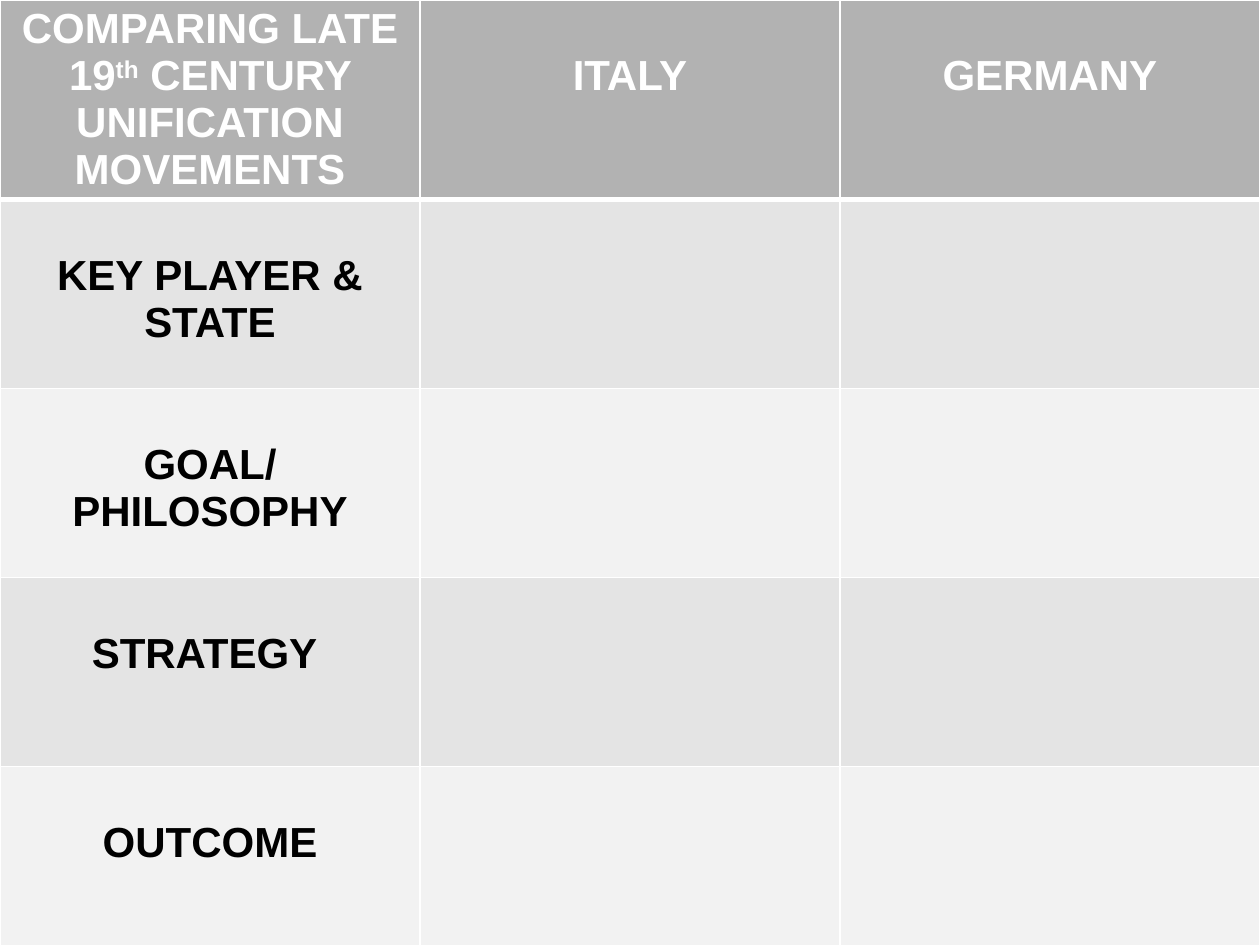
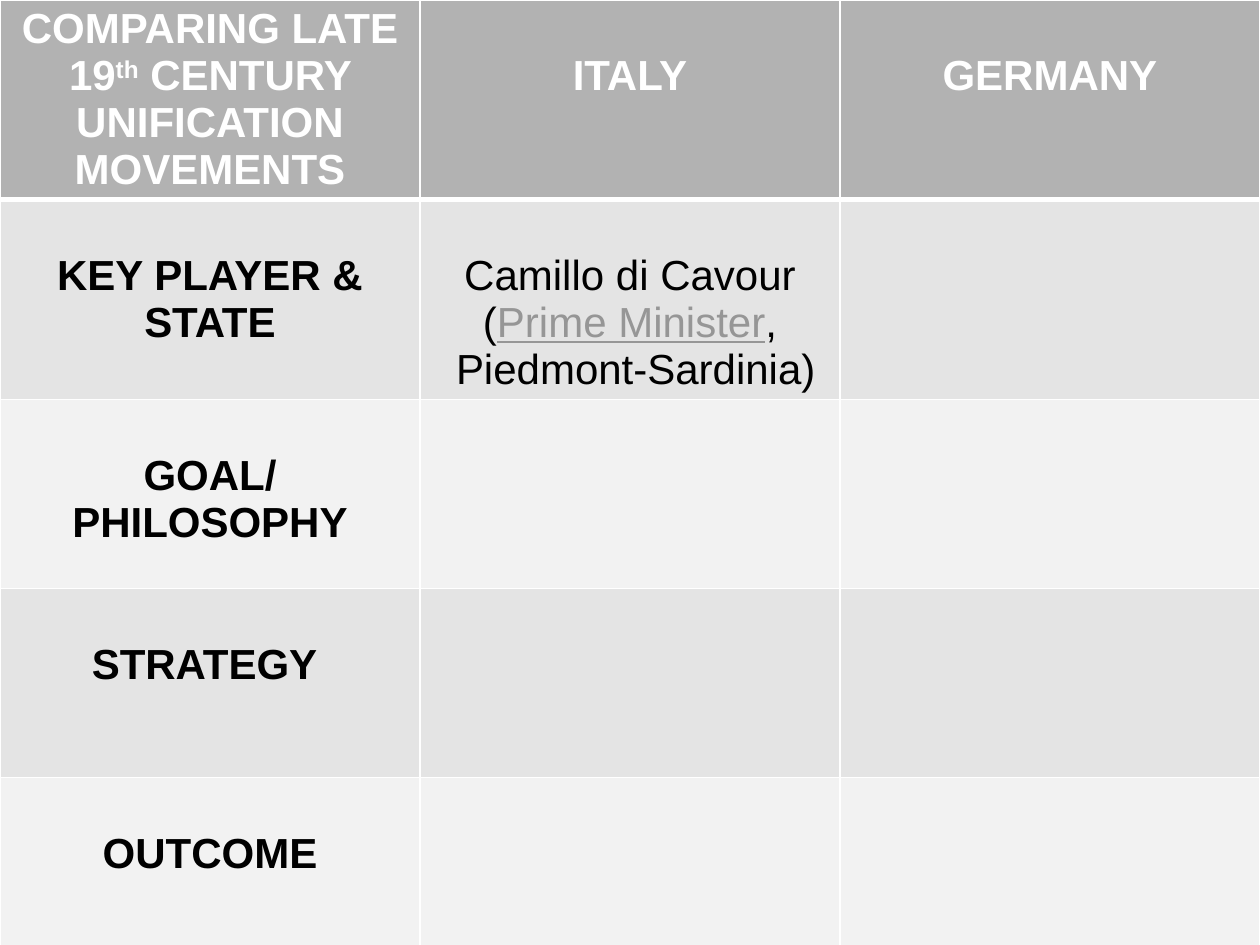
from pptx import Presentation
from pptx.dml.color import RGBColor
from pptx.enum.text import PP_ALIGN as Align
from pptx.oxml.ns import qn
from pptx.util import Emu, Pt
from lxml.etree import SubElement

EMU_PER_PX = 914400 // 126
SLIDE_WIDTH, SLIDE_HEIGHT = 1260, 945
BLANK_LAYOUT = 6

BLACK = RGBColor(0x00, 0x00, 0x00)
WHITE = RGBColor(0xFF, 0xFF, 0xFF)
HEADER_GREY = RGBColor(0xB2, 0xB2, 0xB2)
DARK_BAND = RGBColor(0xE4, 0xE4, 0xE4)
LIGHT_BAND = RGBColor(0xF2, 0xF2, 0xF2)
LINK_GREY = RGBColor(0x96, 0x96, 0x96)

FONT = "Arial"
FONT_SIZE = Pt(24)
CELL_MARGIN = 6
DROPPED_MARGIN = 53  # cell margin plus one line of text
THIN, THICK = 1, 3

# Each paragraph is a list of (text, style) runs
COMPARISON_TITLE = [[("COMPARING LATE 19", ""), ("th", "superscript"),
                     (" CENTURY UNIFICATION MOVEMENTS", "")]]
COUNTRIES = ["ITALY", "GERMANY"]
TOPICS = ["KEY PLAYER & STATE", "GOAL/PHILOSOPHY", "STRATEGY ", "OUTCOME"]
CAVOUR = [
    [("Camillo di Cavour", "")],
    [("(", ""), ("Prime Minister", "underlined"), (",", "")],
    [(" Piedmont-Sardinia)", "")],
]


def px(length):
    return Emu(round(length * 914400 / 126))


def add_run(paragraph, text, color, bold, style=""):
    run = paragraph.add_run()
    run.text = text
    font = run.font
    font.name, font.size, font.bold = FONT, FONT_SIZE, bold
    font.color.rgb = color
    if style == "superscript":
        run._r.get_or_add_rPr().set("baseline", "30000")
    elif style == "underlined":
        font.underline = True
        font.color.rgb = LINK_GREY


def write_cell(cell, paragraphs, color=BLACK, bold=False, dropped=True):
    """Write centred paragraphs, one line below the top when dropped."""
    cell.margin_top = px(DROPPED_MARGIN if dropped else CELL_MARGIN)
    frame = cell.text_frame
    for index, runs in enumerate(paragraphs):
        paragraph = frame.add_paragraph() if index else frame.paragraphs[0]
        paragraph.alignment = Align.CENTER
        for text, style in runs:
            add_run(paragraph, text, color, bold, style)


def set_borders(cell, top, bottom):
    properties = cell._tc.get_or_add_tcPr()
    sides = [("a:lnL", THIN), ("a:lnR", THIN), ("a:lnT", top), ("a:lnB", bottom)]
    for position, (tag, width) in enumerate(sides):
        line = SubElement(properties, qn(tag), w=str(Pt(width)))
        fill = SubElement(line, qn("a:solidFill"))
        SubElement(fill, qn("a:srgbClr"), val=str(WHITE))
        properties.insert(position, line)  # borders come before the fill


def style_cell(cell, row):
    cell.fill.solid()
    if row == 0:
        cell.fill.fore_color.rgb = HEADER_GREY
    else:
        cell.fill.fore_color.rgb = DARK_BAND if row % 2 else LIGHT_BAND
    set_borders(cell, top=THICK if row == 1 else THIN,
                bottom=THICK if row == 0 else THIN)


def add_comparison_slide(presentation, answers):
    """Add the comparison table; answers maps (row, column) to paragraphs."""
    slide = presentation.slides.add_slide(presentation.slide_layouts[BLANK_LAYOUT])
    row_count, column_count = len(TOPICS) + 1, len(COUNTRIES) + 1
    table = slide.shapes.add_table(row_count, column_count, 0, 0,
                                   px(SLIDE_WIDTH), px(SLIDE_HEIGHT)).table
    table.horz_banding = False
    for row in range(row_count):
        for column in range(column_count):
            style_cell(table.cell(row, column), row)

    # Header row
    write_cell(table.cell(0, 0), COMPARISON_TITLE, WHITE, bold=True, dropped=False)
    for column, country in enumerate(COUNTRIES, start=1):
        write_cell(table.cell(0, column), [[(country, "")]], WHITE, bold=True)

    # Topic column
    for row, topic in enumerate(TOPICS, start=1):
        write_cell(table.cell(row, 0), [[(topic, "")]], bold=True)

    # Answers
    for (row, column), paragraphs in answers.items():
        write_cell(table.cell(row, column), paragraphs)


def main():
    presentation = Presentation()
    presentation.slide_width = px(SLIDE_WIDTH)
    presentation.slide_height = px(SLIDE_HEIGHT)

    # Shared black background
    background = presentation.slide_master.background.fill
    background.solid()
    background.fore_color.rgb = BLACK

    add_comparison_slide(presentation, {})
    add_comparison_slide(presentation, {(1, 1): CAVOUR})
    presentation.save("out.pptx")


if __name__ == "__main__":
    main()
